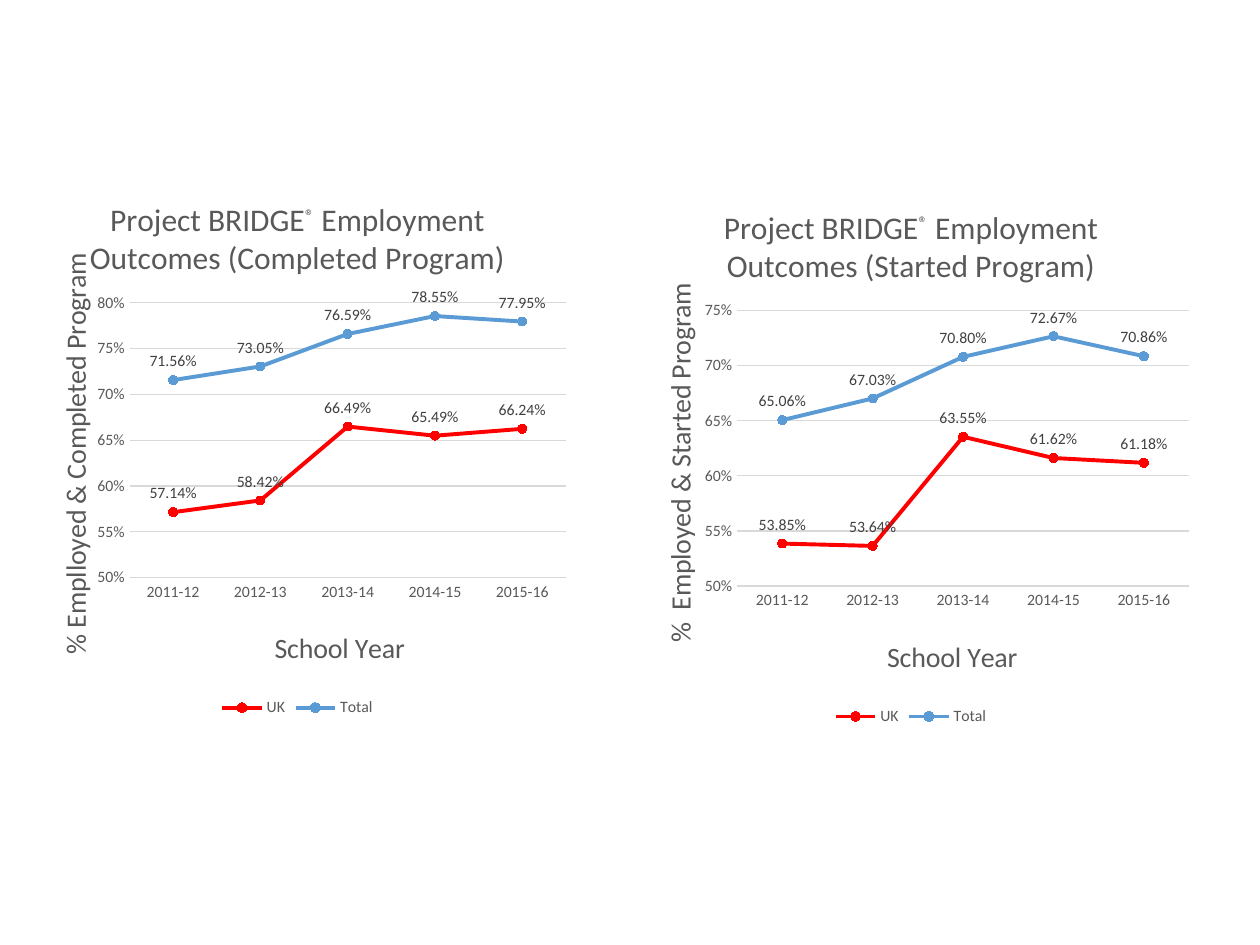
from lxml.etree import SubElement
from pptx import Presentation
from pptx.chart.data import CategoryChartData
from pptx.dml.color import RGBColor
from pptx.enum.chart import (XL_CHART_TYPE, XL_LABEL_POSITION, XL_LEGEND_POSITION,
                             XL_MARKER_STYLE, XL_TICK_MARK)
from pptx.oxml import parse_xml
from pptx.oxml.ns import nsdecls, qn
from pptx.util import Inches, Pt

GREY = RGBColor(0x59, 0x59, 0x59)
LABEL_GREY = RGBColor(0x40, 0x40, 0x40)
RULE_GREY = RGBColor(0xD9, 0xD9, 0xD9)
RED = RGBColor(0xFF, 0x00, 0x00)
BLUE = RGBColor(0x5B, 0x9B, 0xD5)
BLACK = RGBColor(0x00, 0x00, 0x00)
FONT = "Calibri"

SERIES_COLORS = {"UK": RED, "Total": BLUE}
YEARS = ["2011-12", "2012-13", "2013-14", "2014-15", "2015-16"]

# Frames are left, top, width and height in inches; name_top is a share of the chart
OUTCOMES = [
    {"group": "Completed", "measure": "% Emplloyed & Completed Program",
     "frame": (0.14, 1.41, 4.44, 4.32), "top": 0.8, "name_top": 0.13,
     "UK": [0.5714, 0.5842, 0.6649, 0.6549, 0.6624],
     "Total": [0.7156, 0.7305, 0.7659, 0.7855, 0.7795]},
    {"group": "Started", "measure": "%  Employed & Started Program",
     "frame": (4.93, 1.47, 4.6, 4.33), "top": 0.75, "name_top": 0.17,
     "UK": [0.5385, 0.5364, 0.6355, 0.6162, 0.6118],
     "Total": [0.6506, 0.6703, 0.708, 0.7267, 0.7086]},
]


def style(font, size, color=GREY):
    font.name, font.size, font.bold = FONT, Pt(size), False
    font.color.rgb = color


def place(parent, index, **shares):
    """Fix the position of a chart part as shares of the chart's size."""
    for old in parent.findall(qn("c:layout")):
        parent.remove(old)
    layout = parse_xml(f"<c:layout {nsdecls('c')}><c:manualLayout/></c:layout>")
    manual = layout[0]
    if "w" in shares:
        SubElement(manual, qn("c:layoutTarget"), val="inner")
    for side in ("x", "y"):
        SubElement(manual, qn(f"c:{side}Mode"), val="edge")
    for side, share in shares.items():
        SubElement(manual, qn(f"c:{side}"), val=str(share))
    parent.insert(index, layout)


presentation = Presentation()
presentation.slide_width, presentation.slide_height = Inches(10), Inches(7.5)
slide = presentation.slides.add_slide(presentation.slide_layouts[6])

for outcome in OUTCOMES:
    rates = CategoryChartData(number_format="0.00%")
    rates.categories = YEARS
    for name in SERIES_COLORS:
        rates.add_series(name, outcome[name])
    frame = [Inches(length) for length in outcome["frame"]]
    chart = slide.shapes.add_chart(XL_CHART_TYPE.LINE_MARKERS, *frame, rates).chart
    style(chart.font, 10, BLACK)
    place(chart.element.find(".//" + qn("c:plotArea")), 0,
          x=0.2, y=0.23, w=0.78, h=0.505)

    # Heading with a raised registered sign
    chart.has_title = True
    chart.chart_title.include_in_layout = False
    heading = chart.chart_title.text_frame.paragraphs[0]
    for text in ("Project BRIDGE", "®", f" Employment Outcomes ({outcome['group']} Program)"):
        run = heading.add_run()
        run.text = text
        style(run.font, 18)
        if text == "®":
            run.font.fill.solid()
            run.font.fill.fore_color.rgb = GREY
            heading.runs[-1].font._element.set("baseline", "30000")

    # Axes and their names
    years, share = chart.category_axis, chart.value_axis
    for axis, text in ((years, "School Year"), (share, outcome["measure"])):
        axis.major_tick_mark = axis.minor_tick_mark = XL_TICK_MARK.NONE
        style(axis.tick_labels.font, 9)
        run = axis.axis_title.text_frame.paragraphs[0].add_run()
        run.text = text
        style(run.font, 16)
    years.format.line.color.rgb = RULE_GREY
    years.format.line.width = Pt(0.75)
    place(years.axis_title.element if hasattr(years.axis_title, "element")
          else years.axis_title._element, 1, x=0.45, y=0.82)

    share.minimum_scale, share.maximum_scale, share.major_unit = 0.5, outcome["top"], 0.05
    share.tick_labels.number_format = "0%"
    share.tick_labels.number_format_is_linked = False
    share.format.line.fill.background()
    share.has_major_gridlines = True
    share.major_gridlines.format.line.color.rgb = RULE_GREY
    share.major_gridlines.format.line.width = Pt(0.75)
    share_name = share.axis_title._element
    share_name.find(".//" + qn("a:bodyPr")).set("rot", "-5400000")
    place(share_name, 1, x=0.06, y=outcome["name_top"])

    # Lines, markers and values
    for series in chart.plots[0].series:
        color = SERIES_COLORS[series.name]
        series.smooth = False
        series.format.line.color.rgb = color
        series.format.line.width = Pt(2.25)
        series.marker.style, series.marker.size = XL_MARKER_STYLE.CIRCLE, 5
        series.marker.format.fill.solid()
        series.marker.format.fill.fore_color.rgb = color
        series.marker.format.line.color.rgb = color
        labels = series.data_labels
        labels.show_value = True
        labels.position = XL_LABEL_POSITION.ABOVE
        labels.number_format, labels.number_format_is_linked = "0.00%", False
        style(labels.font, 9, LABEL_GREY)

    # Legend
    chart.has_legend = True
    chart.legend.position = XL_LEGEND_POSITION.BOTTOM
    chart.legend.include_in_layout = False
    style(chart.legend.font, 9)

presentation.save("out.pptx")
